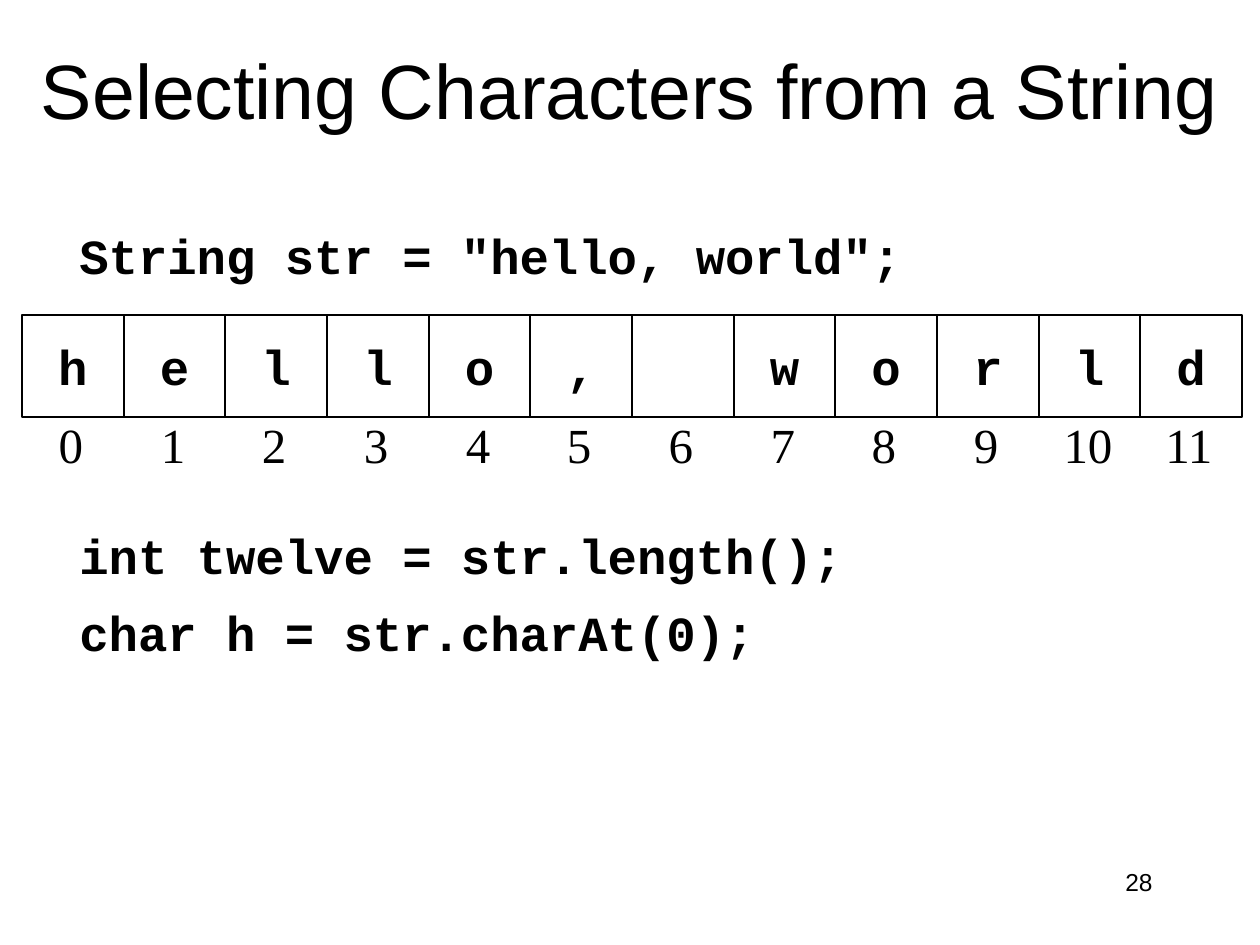
from pptx import Presentation
from pptx import util as u
from pptx.dml.color import RGBColor
from pptx.enum import shapes, text

PX = 914400 / 126
BLACK = RGBColor(0, 0, 0)
WHITE = RGBColor(255, 255, 255)
MONO = "Courier New"


def px(n):
    return u.Emu(round(n * PX))


def write(shape, words, font="Arial", size=28, bold=False,
          align=text.PP_ALIGN.CENTER, anchor=text.MSO_ANCHOR.TOP,
          wrap=True, line=None, gaps=()):
    frame = shape.text_frame
    frame.word_wrap = wrap
    frame.vertical_anchor = anchor
    frame.text = words
    for par in frame.paragraphs:
        par.alignment = align
        par.line_spacing = line
        par.font.name = font
        par.font.size = u.Pt(size)
        par.font.bold = bold
        par.font.color.rgb = BLACK
    for par, gap in zip(frame.paragraphs, gaps):
        par.space_after = u.Pt(gap)


deck = Presentation()
deck.slide_width = px(1260)
deck.slide_height = px(945)
slide = deck.slides.add_slide(deck.slide_layouts[6])
items = slide.shapes

title = items.add_textbox(px(0), px(10), px(1260), px(158))
write(title, "Selecting Characters from a String", size=44,
      anchor=text.MSO_ANCHOR.MIDDLE)

word = "hello, world"
edges = [round(22 + 1220 * i / len(word)) for i in range(len(word) + 1)]
for i, char in enumerate(word):
    left, right = edges[i:i + 2]
    cell = items.add_shape(shapes.MSO_SHAPE.RECTANGLE,
                           px(left), px(315), px(right - left), px(102))
    cell.shadow.inherit = False
    cell.fill.solid()
    cell.fill.fore_color.rgb = WHITE
    cell.line.color.rgb = BLACK
    cell.line.width = u.Pt(0.75)
    if char.strip():
        write(cell, char, font=MONO, bold=True, wrap=False,
              anchor=text.MSO_ANCHOR.MIDDLE)
    index = items.add_textbox(px(left - 1), px(408), px(100), px(72))
    write(index, str(i), font="Times New Roman")

code = items.add_textbox(px(67), px(228), px(1120), px(602))
lines = ['String str = "hello, world";',
         "int twelve = str.length();",
         "char h = str.charAt(0);"]
write(code, "\n".join(lines), font=MONO, bold=True,
      align=text.PP_ALIGN.JUSTIFY, line=0.85, gaps=(143, 15.5, 15.5))

page = items.add_textbox(px(903), px(861), px(262), px(63))
write(page, "28", size=14, align=text.PP_ALIGN.RIGHT)

deck.save("out.pptx")
